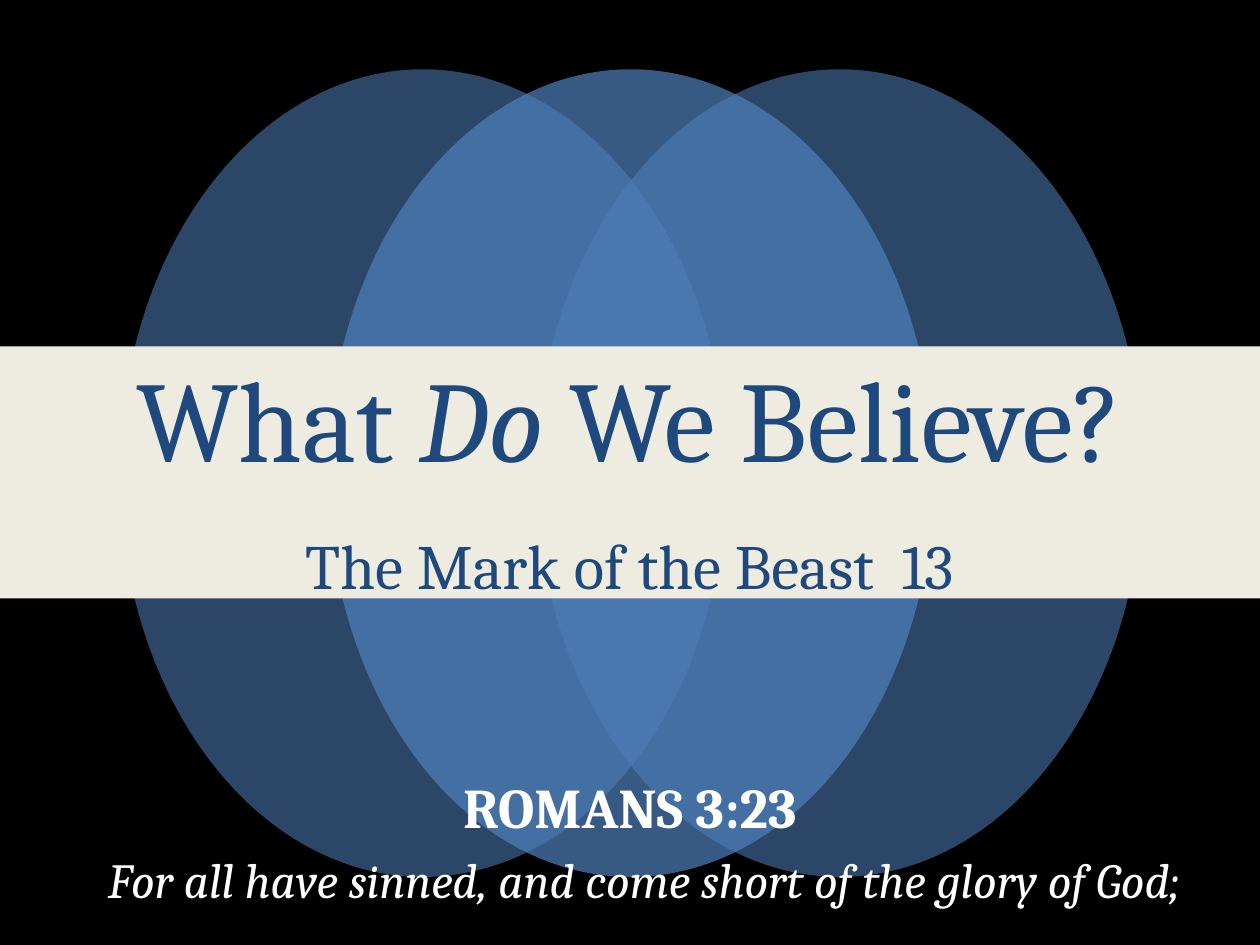
from pptx import Presentation
from pptx import util as u
from pptx.dml.color import RGBColor
from pptx.enum import shapes, text
from pptx.oxml.ns import qn
from lxml import etree

# Content: each line is (runs, size, space before, left indent); a run is (words, bold, italic)
TITLE = [
    ([("What ", False, False), ("Do", False, True), (" We Believe?", False, False)], "title", 0, 0),
    ([("The Mark of the Beast  13", False, False)], "topic", 27, 0),
]
VERSE = [
    ([("ROMANS 3:23", True, False)], "reference", 0, 0),
    ([("For all have sinned, and come short of the glory of God;", False, True)], "verse", 5.6, 0.22),
]
# Circles from back to front: (left, opacity in percent)
CIRCLES = [(0.95, 55), (4.26, 55), (2.6, 70)]
CIRCLE_TOP, CIRCLE_WIDTH, CIRCLE_HEIGHT = 0.55, 4.81, 6.41

THEME = {
    "font": "Cambria",
    "background": "000000", "circle": "4F81BD", "band": "EEECE1",
    "heading": "1F497D", "scripture": "FFFFFF",
    "title": 65.7, "topic": 36, "reference": 32, "verse": 28,
}


def color(role):
    return RGBColor.from_string(THEME[role])


def add_figure(slide, preset, box, role, opacity=100):
    figure = slide.shapes.add_shape(preset, *map(u.Inches, box))
    figure.shadow.inherit = False
    figure.line.fill.background()
    figure.fill.solid()
    figure.fill.fore_color.rgb = color(role)
    if opacity < 100:
        tint = figure.fill._xPr.find(qn("a:solidFill"))[0]
        etree.SubElement(tint, qn("a:alpha")).set("val", str(opacity * 1000))


def add_lines(slide, box, lines, role, anchor, spacing):
    frame = slide.shapes.add_textbox(*map(u.Inches, box)).text_frame
    frame.word_wrap = True
    frame.vertical_anchor = anchor
    for number, (runs, size, before, indent) in enumerate(lines):
        line = frame.add_paragraph() if number else frame.paragraphs[0]
        line.alignment = text.PP_ALIGN.CENTER
        line.line_spacing = spacing
        line.space_before = u.Pt(before)
        if indent:
            line._p.get_or_add_pPr().set("marL", str(u.Inches(indent)))
        for words, bold, italic in runs:
            run = line.add_run()
            run.text = words
            run.font.name = THEME["font"]
            run.font.size = u.Pt(THEME[size])
            run.font.bold, run.font.italic = bold, italic
            run.font.color.rgb = color(role)


def main():
    deck = Presentation()
    deck.slide_width, deck.slide_height = u.Inches(10), u.Inches(7.5)
    slide = deck.slides.add_slide(deck.slide_layouts[6])
    slide.background.fill.solid()
    slide.background.fill.fore_color.rgb = color("background")

    # Overlapping circles
    for left, opacity in CIRCLES:
        box = (left, CIRCLE_TOP, CIRCLE_WIDTH, CIRCLE_HEIGHT)
        add_figure(slide, shapes.MSO_SHAPE.OVAL, box, "circle", opacity)

    # Title band and wording
    add_figure(slide, shapes.MSO_SHAPE.RECTANGLE, (0, 2.75, 10, 2), "band")
    add_lines(slide, (0.08, 3.08, 9.83, 1.51), TITLE, "heading", text.MSO_ANCHOR.MIDDLE, 0.9)
    add_lines(slide, (0.25, 6.08, 9.5, 0.83), VERSE, "scripture", text.MSO_ANCHOR.TOP, 1.0)

    deck.save("out.pptx")


if __name__ == "__main__":
    main()
